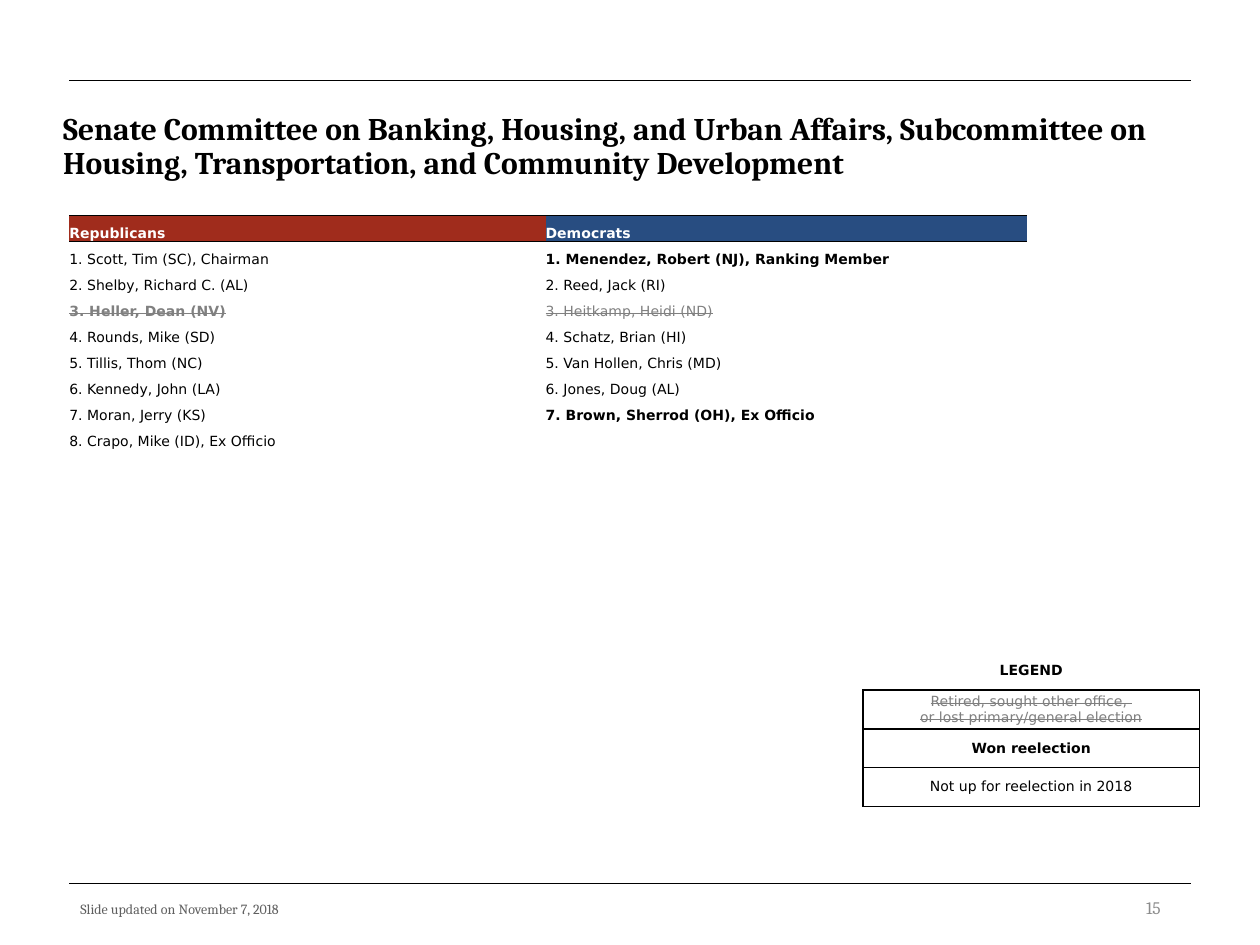
from dataclasses import dataclass
from itertools import zip_longest

from lxml.etree import SubElement
from pptx import Presentation
from pptx.dml.color import RGBColor
from pptx.enum.shapes import MSO_CONNECTOR
from pptx.enum.text import MSO_ANCHOR, PP_ALIGN
from pptx.oxml.ns import qn
from pptx.slide import Slide
from pptx.table import Table, _Cell
from pptx.text.text import TextFrame
from pptx.util import Inches, Length, Pt


@dataclass(frozen=True)
class Theme:
    serif: str = "Cambria"
    sans: str = "DejaVu Sans"
    black: str = "000000"
    white: str = "FFFFFF"
    republican: str = "A02C1C"
    democrat: str = "284D81"
    departed: str = "808080"
    legend_departed: str = "7F7F7F"
    footer: str = "5F5F5F"
    number: str = "8C8C8C"
    title_size: float = 18
    number_size: float = 10
    small_size: float = 8
    rule: float = 0.5
    frame: float = 1


THEME = Theme()
NO_STYLE_TABLE = "{2D5ABB26-0587-4C30-8999-92F81FD0307C}"
GRID_STEP = 0.1  # the page is 100 columns by 75 rows


@dataclass(frozen=True)
class Box:
    """An area of the page in grid columns and rows."""
    left: float
    top: float
    width: float
    height: float

    def lengths(self) -> tuple[Length, ...]:
        return tuple(map(grid, (self.left, self.top, self.width, self.height)))


@dataclass(frozen=True)
class Style:
    color: str = THEME.black
    size: float = THEME.small_size
    font: str = THEME.sans
    bold: bool = False
    strike: bool = False
    align: PP_ALIGN = PP_ALIGN.LEFT


@dataclass(frozen=True)
class Entry:
    text: str
    style: Style = Style()


def grid(steps: float) -> Length:
    return Inches(steps * GRID_STEP)


def write(frame: TextFrame, text: str, style: Style) -> None:
    frame.text = text
    for para in frame.paragraphs:
        para.alignment = style.align
        font = para.font
        font.name, font.size, font.bold = style.font, Pt(style.size), style.bold
        font.color.rgb = RGBColor.from_string(style.color)
        if style.strike:
            font._rPr.set("strike", "sngStrike")
        if not para.runs:
            SubElement(para._p, qn("a:endParaRPr"), sz=str(int(style.size * 100)))


def add_rule(page: Slide, left: float, right: float, row: float) -> None:
    rule = page.shapes.add_connector(
        MSO_CONNECTOR.STRAIGHT, grid(left), grid(row), grid(right), grid(row))
    rule.line.color.rgb = RGBColor.from_string(THEME.black)
    rule.line.width = Pt(THEME.rule)
    SubElement(rule._element.spPr, qn("a:effectLst"))


def add_text(page: Slide, box: Box, entry: Entry, anchor: MSO_ANCHOR) -> None:
    frame = page.shapes.add_textbox(*box.lengths()).text_frame
    frame.word_wrap = True
    frame.vertical_anchor = anchor
    write(frame, entry.text, entry.style)


def add_plain_table(page: Slide, box: Box, rows: int, widths: list[float]) -> Table:
    table = page.shapes.add_table(rows, len(widths), *box.lengths()).table
    table.first_row = table.horz_banding = False
    table._tbl.tblPr.find(qn("a:tableStyleId")).text = NO_STYLE_TABLE
    for column, width in zip(table.columns, widths):
        column.width = grid(width)
    return table


def add_borders(cell: _Cell, sides: str, points: float) -> None:
    """Draw the given sides, named in the order L, R, T, B."""
    properties = cell._tc.get_or_add_tcPr()
    for side in sides:
        line = SubElement(properties, qn(f"a:ln{side}"), w=str(Pt(points)))
        fill = SubElement(line, qn("a:solidFill"))
        SubElement(fill, qn("a:srgbClr"), val=THEME.black)


def fill_cell(cell: _Cell, entry: Entry, anchor: MSO_ANCHOR,
              inset: tuple[float, float] = (0, 0), color: str | None = None) -> None:
    cell.margin_left = cell.margin_right = Inches(inset[0])
    cell.margin_top = cell.margin_bottom = Inches(inset[1])
    cell.vertical_anchor = anchor
    if color:
        cell.fill.solid()
        cell.fill.fore_color.rgb = RGBColor.from_string(color)
    else:
        cell.fill.background()
    write(cell.text_frame, entry.text, entry.style)


def add_members(page: Slide, box: Box, widths: list[float],
                parties: list[tuple[str, str, list[Entry]]]) -> None:
    members = list(zip_longest(*(party[2] for party in parties), fillvalue=None))
    table = add_plain_table(page, box, len(members) + 1, widths)
    heading = Style(THEME.white, bold=True)
    for column, (name, color, _) in enumerate(parties):
        cell = table.cell(0, column)
        add_borders(cell, "TB", THEME.rule)
        fill_cell(cell, Entry(name, heading), MSO_ANCHOR.BOTTOM, color=color)
    for number, pair in enumerate(members, start=1):
        for column, member in enumerate(pair):
            entry = Entry(f"{number}. {member.text}", member.style) if member else Entry("")
            fill_cell(table.cell(number, column), entry, MSO_ANCHOR.BOTTOM)


def add_legend(page: Slide, box: Box, entries: list[Entry]) -> None:
    table = add_plain_table(page, box, len(entries), [box.width])
    for row, entry in enumerate(entries):
        cell = table.cell(row, 0)
        add_borders(cell, "LRTB" if row else "B", THEME.frame)
        fill_cell(cell, entry, MSO_ANCHOR.MIDDLE, inset=(0.04, 0.02))


WON = Style(bold=True)
LOST = Style(THEME.departed, strike=True)
LOST_BOLD = Style(THEME.departed, bold=True, strike=True)
CENTER = PP_ALIGN.CENTER

PARTIES = [
    ("Republicans", THEME.republican, [
        Entry("Scott, Tim (SC), Chairman"), Entry("Shelby, Richard C. (AL)"),
        Entry("Heller, Dean (NV)", LOST_BOLD), Entry("Rounds, Mike (SD)"),
        Entry("Tillis, Thom (NC)"), Entry("Kennedy, John (LA)"),
        Entry("Moran, Jerry (KS)"), Entry("Crapo, Mike (ID), Ex Officio")]),
    ("Democrats", THEME.democrat, [
        Entry("Menendez, Robert (NJ), Ranking Member", WON), Entry("Reed, Jack (RI)"),
        Entry("Heitkamp, Heidi (ND)", LOST), Entry("Schatz, Brian (HI)"),
        Entry("Van Hollen, Chris (MD)"), Entry("Jones, Doug (AL)"),
        Entry("Brown, Sherrod (OH), Ex Officio", WON)]),
]
LEGEND = [
    Entry("LEGEND", Style(bold=True, align=CENTER)),
    Entry("Retired, sought other office, \nor lost primary/general election",
          Style(THEME.legend_departed, strike=True, align=CENTER)),
    Entry("Won reelection", Style(bold=True, align=CENTER)),
    Entry("Not up for reelection in 2018", Style(align=CENTER)),
]


def main() -> None:
    deck = Presentation()
    deck.slide_width, deck.slide_height = grid(100), grid(75)
    page = deck.slides.add_slide(deck.slide_layouts.get_by_name("Title Only"))
    for row in (70.1, 6.4):
        add_rule(page, 5.5, 94.5, row)

    title = page.shapes.title
    title.left, title.top, title.width, title.height = Box(4, 8.5, 92, 7).lengths()
    title.text_frame.vertical_anchor = MSO_ANCHOR.TOP
    write(title.text_frame, "Senate Committee on Banking, Housing, and Urban Affairs, "
          "Subcommittee on Housing, Transportation, and Community Development",
          Style(size=THEME.title_size, font=THEME.serif, bold=True))
    title.text_frame.paragraphs[0].line_spacing = 0.9

    add_members(page, Box(5.5, 17.1, 76, 18.6), [37.8, 38.2], PARTIES)
    add_legend(page, Box(68.5, 51.7, 26.7, 12.3), LEGEND)
    add_text(page, Box(5.4, 71, 44, 2.4), Entry(
        "Slide updated on November 7, 2018",
        Style(THEME.footer, font=THEME.serif)), MSO_ANCHOR.TOP)
    add_text(page, Box(70.6, 70.6, 22.5, 2.9), Entry("15", Style(
        THEME.number, THEME.number_size, THEME.serif, align=PP_ALIGN.RIGHT)),
        MSO_ANCHOR.MIDDLE)
    deck.save("out.pptx")


if __name__ == "__main__":
    main()
